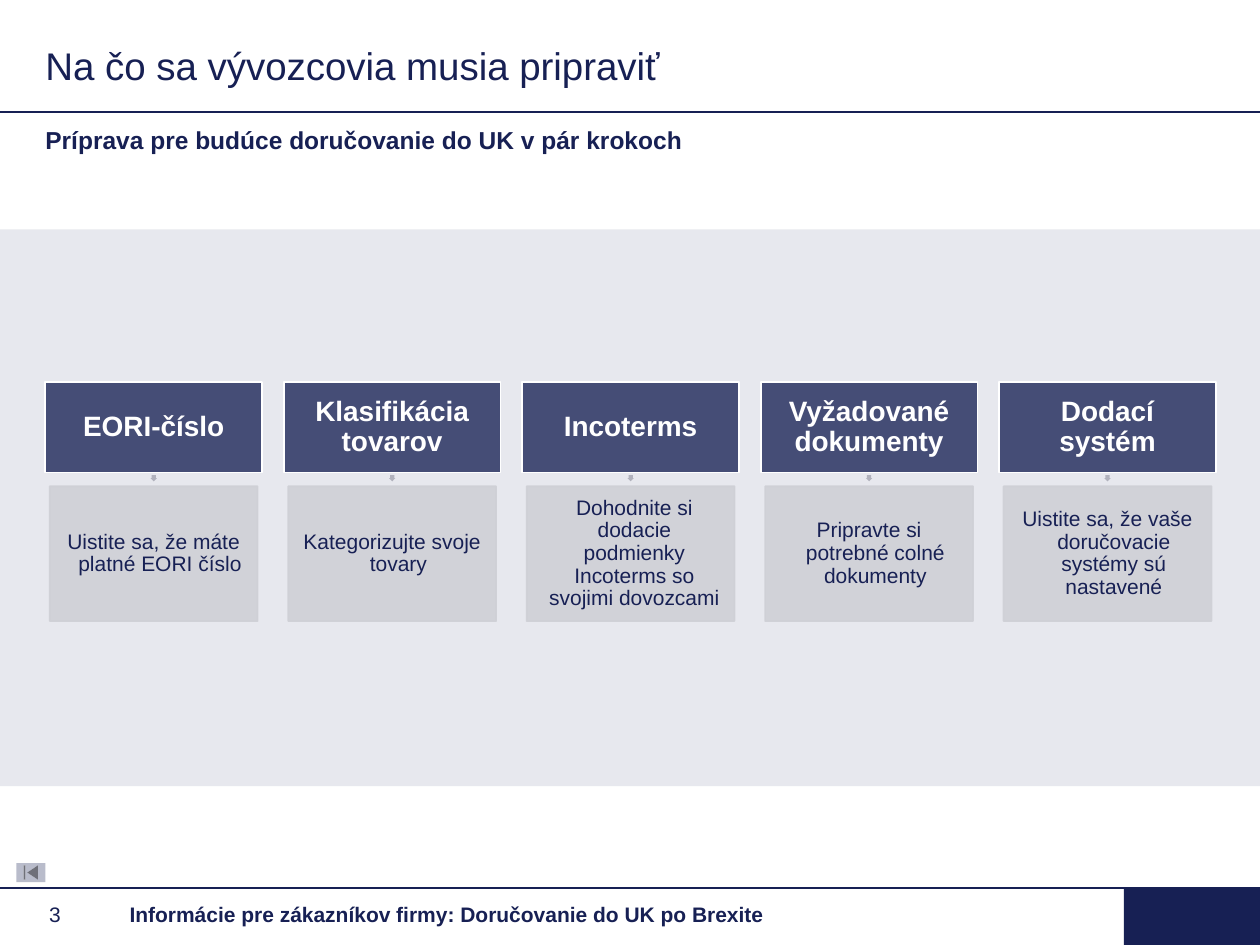
import pptx
import pptx.util
import pptx.dml.color
import pptx.enum.shapes
import pptx.enum.text
import pptx.oxml.ns
import lxml.etree
from dataclasses import dataclass

Inches = pptx.util.Inches
Pt = pptx.util.Pt
RGB = pptx.dml.color.RGBColor.from_string
SHAPE = pptx.enum.shapes.MSO_SHAPE
ALIGN = pptx.enum.text.PP_ALIGN
ANCHOR = pptx.enum.text.MSO_ANCHOR
qn = pptx.oxml.ns.qn

# Content
TITLE = "Na čo sa vývozcovia musia pripraviť"
SUBTITLE = "Príprava pre budúce doručovanie do UK v pár krokoch"
FOOTER = "Informácie pre zákazníkov firmy: Doručovanie do UK po Brexite"
PAGE = "3"
HANGING, PLAIN = (0.1, -0.1), (0.06, 0)
STEPS = [
    ("EORI-číslo", "Uistite sa, že máte platné EORI číslo", HANGING),
    ("Klasifikácia tovarov", "Kategorizujte svoje tovary", HANGING),
    ("Incoterms",
     "Dohodnite si dodacie podmienky Incoterms so svojimi dovozcami", PLAIN),
    ("Vyžadované dokumenty", "Pripravte si potrebné colné dokumenty", HANGING),
    ("Dodací systém",
     "Uistite sa, že vaše doručovacie systémy sú nastavené", HANGING),
]


@dataclass
class Theme:
    font: str = "Arial"
    navy: str = "172054"
    band: str = "E7E8EE"
    head: str = "454D76"
    detail: str = "CFD0D6"
    arrow: str = "B1B2BD"
    button: str = "B9BCCB"
    white: str = "FFFFFF"
    title: int = 22
    heading: int = 16
    subtitle: int = 14
    body: int = 12


T = Theme()
BOX_INSETS = (0.08, 0.08, 0.08, 0.08)
LEFT_FLUSH = (0, 0.05, 0.1, 0.05)

prs = pptx.Presentation()
prs.slide_width, prs.slide_height = Inches(10), Inches(7.5)
slide = prs.slides.add_slide(prs.slide_layouts[6])


def write(sp, text, *, size, color=T.navy, bold=False, align=ALIGN.LEFT,
          anchor=ANCHOR.MIDDLE, insets=LEFT_FLUSH, indent=(0, 0), spacing=None):
    tf = sp.text_frame
    tf.word_wrap = True
    tf.vertical_anchor = anchor
    (tf.margin_left, tf.margin_top,
     tf.margin_right, tf.margin_bottom) = map(Inches, insets)
    p = tf.paragraphs[0]
    p.alignment = align
    p.line_spacing = spacing
    pPr = p._p.get_or_add_pPr()
    pPr.set("marL", str(Inches(indent[0])))
    pPr.set("indent", str(Inches(indent[1])))
    r = p.add_run()
    r.text = text
    r.font.name, r.font.size, r.font.bold = T.font, Pt(size), bold
    r.font.color.rgb = RGB(color)


def text_box(text, at, **fmt):
    write(slide.shapes.add_textbox(*map(Inches, at)), text, **fmt)


def shape(kind, at, fill, line=None, opacity=100):
    sp = slide.shapes.add_shape(kind, *map(Inches, at))
    sp.shadow.inherit = False
    sp.fill.solid()
    sp.fill.fore_color.rgb = RGB(fill)
    if line:
        sp.line.color.rgb = RGB(line)
        sp.line.width = Pt(1)
    else:
        sp.line.fill.background()
    if opacity < 100:
        for clr in sp._element.spPr.iter(qn("a:srgbClr")):
            lxml.etree.SubElement(clr, qn("a:alpha")).set("val", str(opacity * 1000))
    return sp


def rule(y):
    cx = slide.shapes.add_connector(pptx.enum.shapes.MSO_CONNECTOR.STRAIGHT,
                                    0, Inches(y), prs.slide_width, Inches(y))
    cx.line.color.rgb = RGB(T.navy)
    cx.line.width = Pt(1)
    lxml.etree.SubElement(cx._element.spPr, qn("a:effectLst"))


# Frame: rules, corner block and background band
rule(0.89)
rule(7.05)
shape(SHAPE.RECTANGLE, (8.92, 7.05, 1.08, 0.45), T.navy)
shape(SHAPE.RECTANGLE, (0, 1.82, 10, 4.42), T.band)

# Title, subtitle and footer
text_box(TITLE, (0.36, 0.28, 9.29, 0.47), size=T.title)
text_box(SUBTITLE, (0.36, 0.94, 9.29, 0.34), size=T.subtitle, bold=True,
         anchor=ANCHOR.TOP)
text_box(FOOTER, (0.93, 7.13, 5.95, 0.25), size=T.body, bold=True,
         insets=(0.1, 0.05, 0.1, 0.05))
text_box(PAGE, (0.39, 7.13, 0.54, 0.25), size=T.body)

# Steps: heading, small arrow and detail box, centred on each column
LEFT, RIGHT = 0.36, 9.65
HEAD_W, DETAIL_W, ARROW = 1.72, 1.65, 0.05
pitch = (RIGHT - LEFT - HEAD_W) / (len(STEPS) - 1)
for i, (heading, detail, indent) in enumerate(STEPS):
    x = LEFT + i * pitch
    mid = x + HEAD_W / 2
    box = dict(align=ALIGN.CENTER, insets=BOX_INSETS, spacing=0.9)

    sp = shape(SHAPE.RECTANGLE, (x, 3.03, HEAD_W, 0.72), T.head, T.white)
    write(sp, heading, size=T.heading, color=T.white, bold=True, **box)

    sp = shape(SHAPE.RIGHT_ARROW, (mid - ARROW / 2, 3.77, ARROW, ARROW), T.arrow)
    sp.rotation = 90
    sp.adjustments[0] = 0.67

    sp = shape(SHAPE.RECTANGLE, (mid - DETAIL_W / 2, 3.86, DETAIL_W, 1.07),
               T.detail, T.detail, opacity=90)
    write(sp, detail, size=T.body, indent=indent, **box)

# Back-to-start button
shape(SHAPE.ACTION_BUTTON_BEGINNING, (0.13, 6.85, 0.23, 0.15), T.button)

prs.save("out.pptx")
